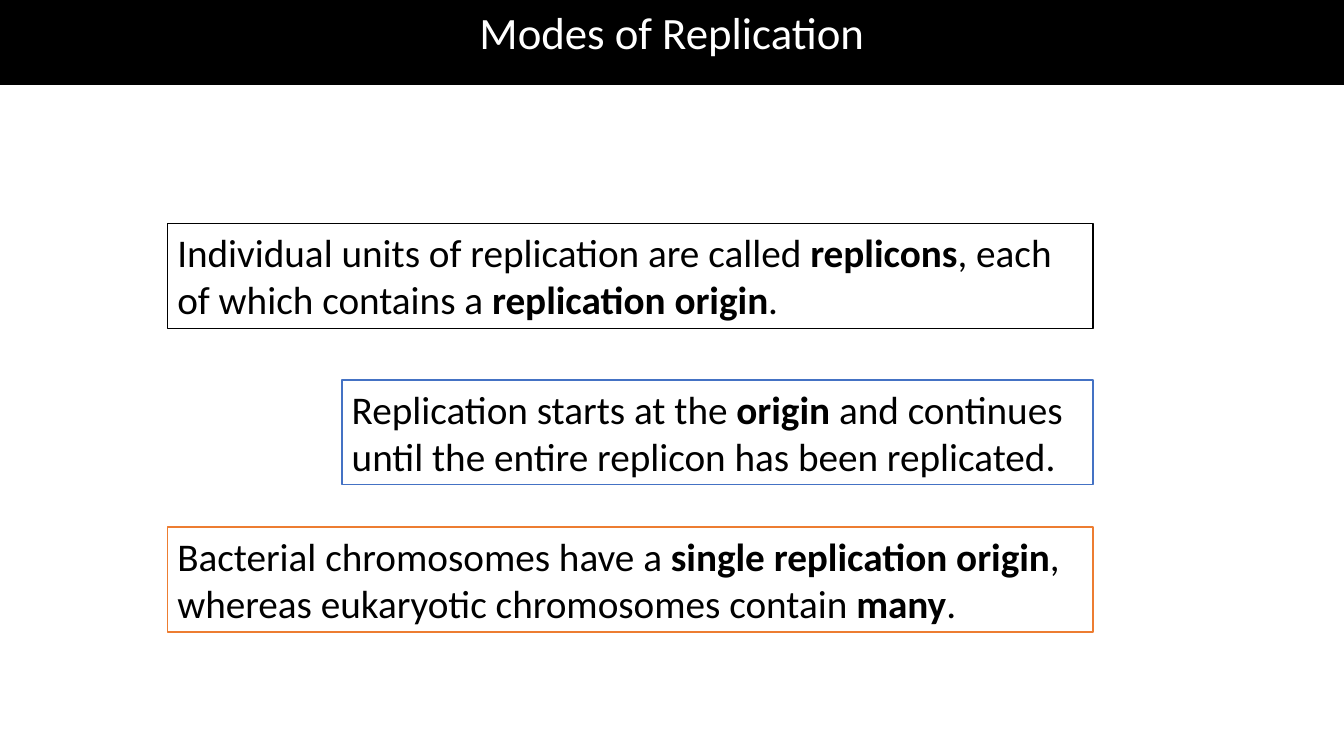
from pptx import Presentation
from pptx import util as u
from pptx.dml.color import RGBColor
from pptx.enum import shapes, text

BLACK = RGBColor(0x00, 0x00, 0x00)
WHITE = RGBColor(0xFF, 0xFF, 0xFF)
BLUE = RGBColor(0x44, 0x72, 0xC4)
ORANGE = RGBColor(0xED, 0x7D, 0x31)

SLIDE_W, SLIDE_H = 13.33, 7.5
BOX_RIGHT, BOX_H = 10.84, 1.04

STATEMENTS = [
    (1.66, 2.22, BLACK, [
        ("Individual units of replication are called ", False),
        ("replicons", True),
        (", each of which contains a ", False),
        ("replication origin", True),
        (".", False),
    ]),
    (3.39, 3.77, BLUE, [
        ("Replication starts at the ", False),
        ("origin", True),
        (" and continues until the entire replicon has been replicated.", False),
    ]),
    (1.66, 5.23, ORANGE, [
        ("Bacterial chromosomes have a ", False),
        ("single replication origin", True),
        (", whereas eukaryotic chromosomes contain ", False),
        ("many", True),
        (".", False),
    ]),
]


class SlideBuilder:
    font = "Calibri"
    frame = {
        "word_wrap": True,
        "auto_size": text.MSO_AUTO_SIZE.SHAPE_TO_FIT_TEXT,
        "vertical_anchor": text.MSO_ANCHOR.TOP,
    }

    def __init__(self, prs):
        self.s = prs.slides.add_slide(prs.slide_layouts.get_by_name("Title Only"))

    def apply(self, obj, values):
        for name, value in values.items():
            setattr(obj, name, value)

    def paint(self, sp, fill, line):
        sp.fill.solid()
        sp.fill.fore_color.rgb = fill
        sp.line.color.rgb = line
        sp.line.width = u.Pt(1)

    def add_words(self, sp, runs, size, color, align):
        tf = sp.text_frame
        self.apply(tf, self.frame)
        p = tf.paragraphs[0]
        p.alignment = align
        for words, bold in runs:
            r = p.add_run()
            r.text = words
            self.apply(r.font, {"name": self.font, "size": u.Pt(size), "bold": bold})
            r.font.color.rgb = color

    def title(self, words, height):
        sp = self.s.shapes.title
        self.apply(sp, {
            "left": u.Inches(0),
            "top": u.Inches(0),
            "width": u.Inches(SLIDE_W),
            "height": u.Inches(height),
        })
        self.paint(sp, BLACK, BLACK)
        self.add_words(sp, [(words, False)], 32, WHITE, text.PP_ALIGN.CENTER)

    def box(self, left, top, line, runs):
        sp = self.s.shapes.add_shape(
            shapes.MSO_SHAPE.RECTANGLE, u.Inches(left), u.Inches(top),
            u.Inches(BOX_RIGHT - left), u.Inches(BOX_H))
        sp.shadow.inherit = False
        self.paint(sp, WHITE, line)
        self.add_words(sp, runs, 28, BLACK, text.PP_ALIGN.LEFT)


def main():
    prs = Presentation()
    prs.slide_width = u.Inches(SLIDE_W)
    prs.slide_height = u.Inches(SLIDE_H)
    builder = SlideBuilder(prs)
    builder.title("Modes of Replication", 0.64)
    for left, top, line, runs in STATEMENTS:
        builder.box(left, top, line, runs)
    prs.save("out.pptx")


if __name__ == "__main__":
    main()
